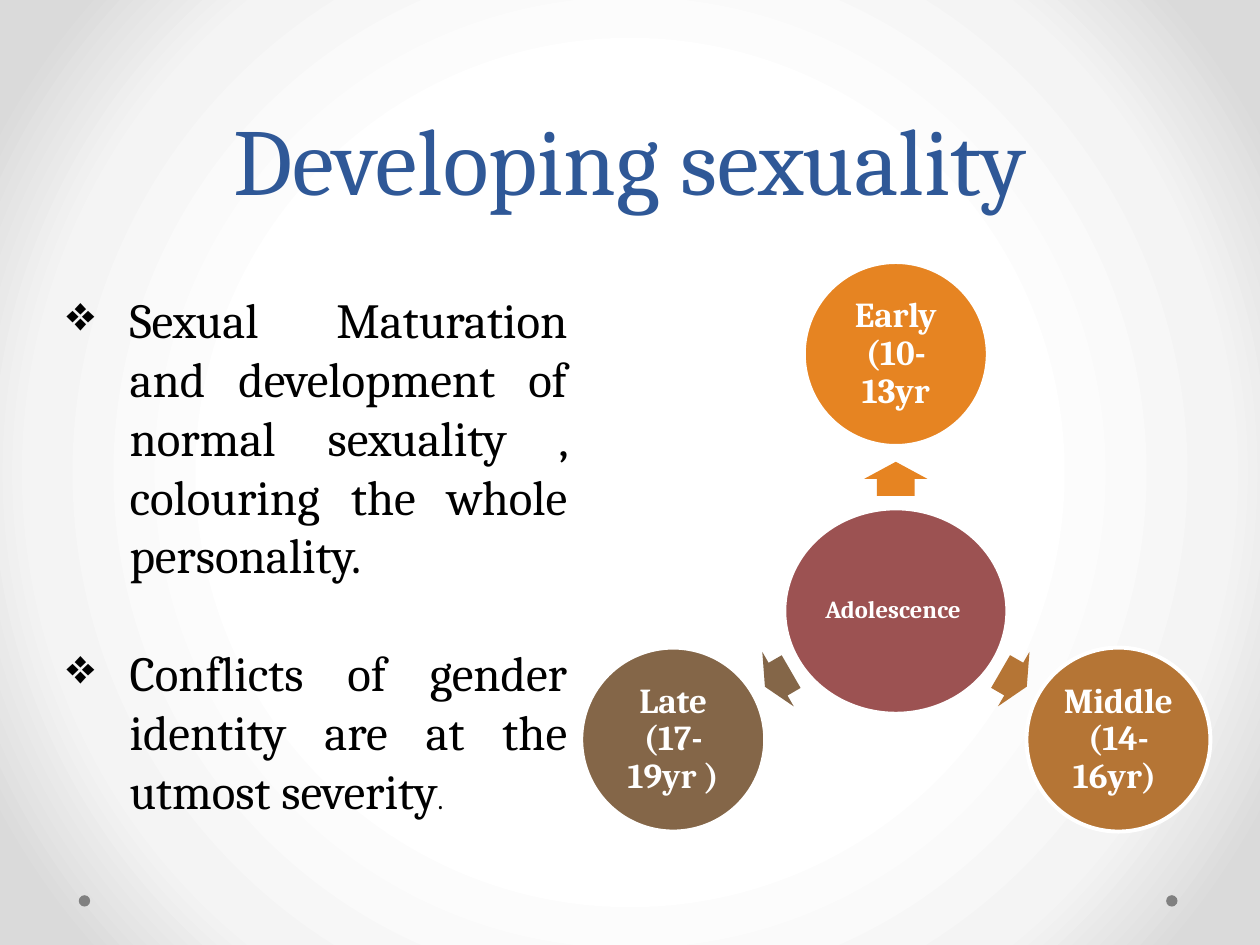
"""Build the Developing sexuality slide: two bullets beside a radial diagram of adolescence."""
from math import cos, radians, sin

from lxml.etree import SubElement
from pptx import Presentation
from pptx.dml.color import RGBColor as RGB
from pptx.enum.shapes import MSO_SHAPE as Shape
from pptx.enum.text import MSO_ANCHOR as Anchor, PP_ALIGN as Align
from pptx.oxml import parse_xml
from pptx.oxml.ns import nsdecls, qn
from pptx.util import Inches, Pt

COLORS = {
    "title": "2F5897", "body": "000000", "white": "FFFFFF", "dot": "808080",
    "hub": "9C5252", "early": "E68422", "middle": "B57535", "late": "846648",
}
BACKGROUND_STOPS = [(50, "FFFFFF"), (76, "F4F4F4"), (92, "DADADA")]
TITLE = "Developing sexuality"
BULLETS = [
    [("Sexual Maturation and development of normal sexuality , colouring the whole personality. ", 28)],
    [("Conflicts of gender identity are at the utmost severity", 28), (".", 16)],
]
HUB = "Adolescence "
STAGES = [
    {"text": "Early\v(10-13yr", "color": "early", "angle": 270, "arrow": (1.05, 0.27)},
    {"text": "Middle\v(14-16yr) ", "color": "middle", "angle": 30, "arrow": (1.08, 0.24)},
    {"text": "Late\v(17-19yr )", "color": "late", "angle": 150, "arrow": (1.08, 0.24)},
]
CENTER = (7.11, 4.85)
ORBIT = 2.04
STAGE_SIZE = 1.46
ARROW_HEIGHT = 0.5


def color(name):
    return RGB.from_string(COLORS[name])


def format_font(font, size, color_name, bold=False):
    values = {"name": "Cambria", "size": Pt(size), "bold": bold}
    for key, value in values.items():
        setattr(font, key, value)
    font.color.rgb = color(color_name)


def set_background(slide):
    slide.background.fill.solid()
    solid = slide.element.find(".//" + qn("a:solidFill"))
    stops = "".join(
        f'<a:gs pos="{position * 1000}"><a:srgbClr val="{value}"/></a:gs>'
        for position, value in BACKGROUND_STOPS
    )
    gradient = parse_xml(
        f'<a:gradFill {nsdecls("a")} rotWithShape="1"><a:gsLst>{stops}</a:gsLst>'
        '<a:path path="circle"><a:fillToRect l="50000" t="50000" r="50000" b="50000"/>'
        "</a:path></a:gradFill>"
    )
    solid.getparent().replace(solid, gradient)


def add_centered(slide, kind, center, width, height, fill, outlined=False):
    left, top = center[0] - width / 2, center[1] - height / 2
    shape = slide.shapes.add_shape(kind, Inches(left), Inches(top), Inches(width), Inches(height))
    shape.shadow.inherit = False
    shape.fill.solid()
    shape.fill.fore_color.rgb = color(fill)
    if outlined:
        shape.line.color.rgb = color("white")
        shape.line.width = Pt(2.25)
    else:
        shape.line.fill.background()
    return shape


def add_circle(slide, center, width, height, fill, text, size, inset):
    circle = add_centered(slide, Shape.OVAL, center, width, height, fill, outlined=True)
    frame = circle.text_frame
    margins = dict.fromkeys(("margin_left", "margin_top", "margin_right", "margin_bottom"), Inches(inset))
    for key, value in {**margins, "word_wrap": True, "vertical_anchor": Anchor.MIDDLE}.items():
        setattr(frame, key, value)
    paragraph = frame.paragraphs[0]
    paragraph.text = text
    paragraph.alignment = Align.CENTER
    paragraph.line_spacing = 0.9
    format_font(paragraph.font, size, "white", bold=True)
    for run in paragraph.runs:
        format_font(run.font, size, "white", bold=True)


def add_text_frame(slide, left, top, width, height):
    box = slide.shapes.add_textbox(Inches(left), Inches(top), Inches(width), Inches(height))
    box.text_frame.word_wrap = True
    return box.text_frame


def add_run(paragraph, text, size, color_name):
    run = paragraph.add_run()
    run.text = text
    format_font(run.font, size, color_name)


def add_title(slide):
    frame = add_text_frame(slide, 0.5, 0, 9, 1.75)
    frame.vertical_anchor = Anchor.BOTTOM
    paragraph = frame.paragraphs[0]
    paragraph.alignment = Align.CENTER
    paragraph.line_spacing = Pt(58)
    add_run(paragraph, TITLE, 54, "title")


def add_bullets(slide):
    frame = add_text_frame(slide, 0.43, 2.25, 4.17, 4.34)
    for index, runs in enumerate(BULLETS):
        paragraph = frame.add_paragraph() if index else frame.paragraphs[0]
        paragraph.alignment = Align.JUSTIFY
        if index:
            paragraph.space_before = Pt(33.6)
        properties = paragraph._p.get_or_add_pPr()
        properties.set("marL", str(Inches(0.5)))
        properties.set("indent", str(Inches(-0.5)))
        SubElement(properties, qn("a:buChar")).set("char", "❖")
        for text, size in runs:
            add_run(paragraph, text, size, "body")


def point_at(angle, distance):
    turn = radians(angle)
    return CENTER[0] + distance * cos(turn), CENTER[1] + distance * sin(turn)


def add_diagram(slide):
    add_circle(slide, CENTER, 1.77, 1.63, "hub", HUB, 14, 0.02)
    for stage in STAGES:
        distance, length = stage["arrow"]
        angle, fill = stage["angle"], stage["color"]
        arrow = add_centered(slide, Shape.RIGHT_ARROW, point_at(angle, distance), length, ARROW_HEIGHT, fill)
        arrow.adjustments[0], arrow.adjustments[1] = 0.6, 0.5
        arrow.rotation = angle
        add_circle(slide, point_at(angle, ORBIT), STAGE_SIZE, STAGE_SIZE, fill, stage["text"], 20, 0.03)


def main():
    presentation = Presentation()
    presentation.slide_width, presentation.slide_height = Inches(10), Inches(7.5)
    slide = presentation.slides.add_slide(presentation.slide_layouts[6])
    set_background(slide)
    for x in (9.3, 0.67):
        add_centered(slide, Shape.OVAL, (x, 7.15), 0.09, 0.09, "dot")
    add_title(slide)
    add_diagram(slide)
    add_bullets(slide)
    presentation.save("out.pptx")


if __name__ == "__main__":
    main()
